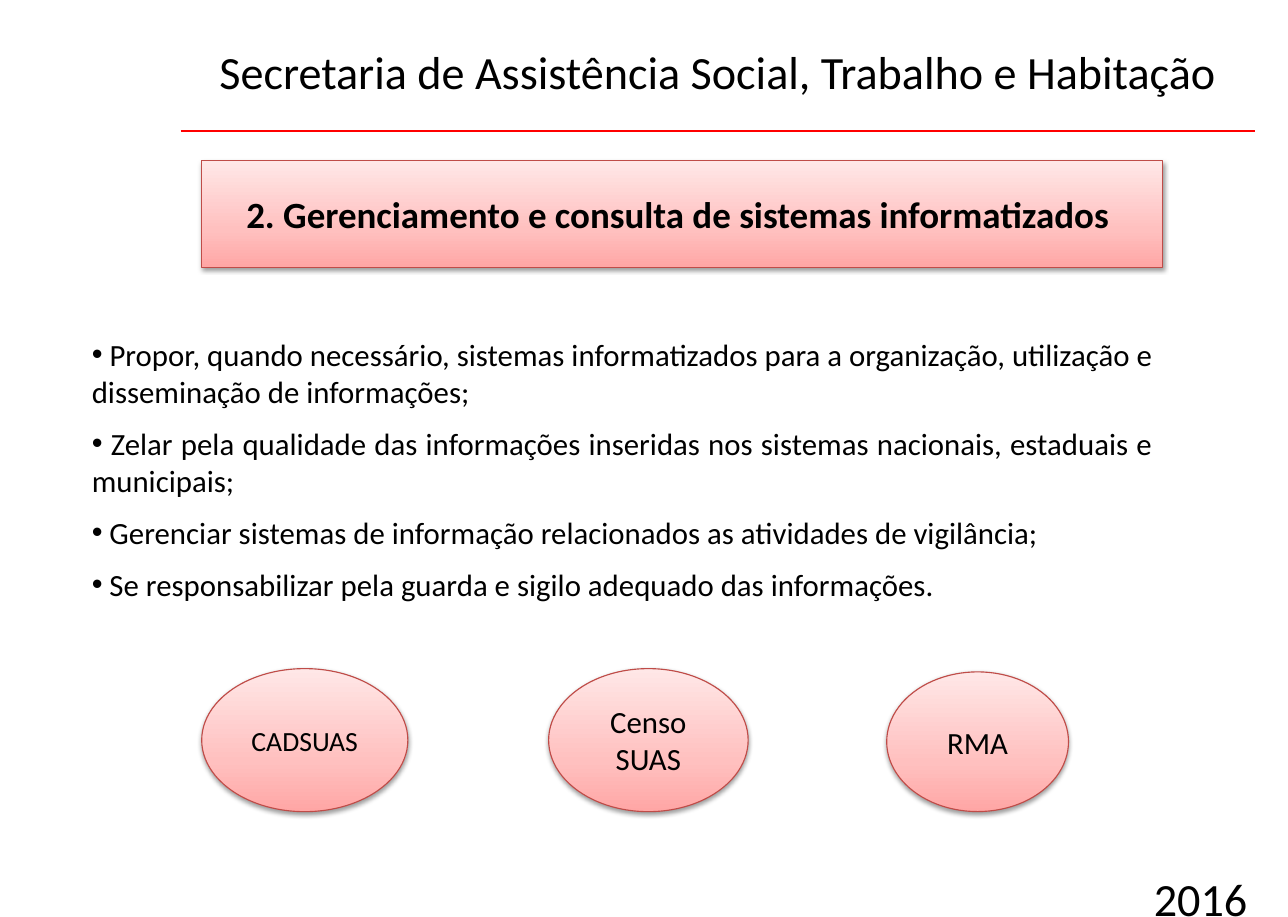
import pptx
import pptx.dml.color
import pptx.enum.shapes
import pptx.enum.text
import pptx.oxml
import pptx.oxml.ns
import pptx.util
from lxml import etree

Inches = pptx.util.Inches
Pt = pptx.util.Pt
RGBColor = pptx.dml.color.RGBColor
MSO_SHAPE = pptx.enum.shapes.MSO_SHAPE
ALIGN = pptx.enum.text.PP_ALIGN
ANCHOR = pptx.enum.text.MSO_ANCHOR
qn = pptx.oxml.ns.qn

FONT = "Calibri"
BLACK = RGBColor(0x00, 0x00, 0x00)
RED = RGBColor(0xFF, 0x00, 0x00)
DARK_RED = RGBColor(0xBF, 0x4C, 0x48)
PINK_STOPS = [
    (0, RGBColor(0xFF, 0xA6, 0xA5)),
    (35, RGBColor(0xFF, 0xC0, 0xBF)),
    (100, RGBColor(0xFF, 0xE7, 0xE7)),
]
DUTIES = [
    "Propor, quando necessário, sistemas informatizados para a organização, "
    "utilização e disseminação de informações;",
    "Zelar pela qualidade das informações inseridas nos sistemas nacionais, "
    "estaduais e municipais;",
    "Gerenciar sistemas de informação relacionados as atividades de vigilância;",
    "Se responsabilizar pela guarda e sigilo adequado das informações.",
]
SYSTEMS = [
    ("CADSUAS", 18, (1.82, 6.03, 1.86, 1.29)),
    ("Censo SUAS", 20, (4.95, 6.03, 1.8, 1.29)),
    ("RMA", 20, (8, 6.06, 1.64, 1.26)),
]


def write(p, text, size=20, bold=False, align=ALIGN.LEFT, before=0, bullet=None):
    """Fill a paragraph with formatted text."""
    if bullet:
        pPr = p._p.get_or_add_pPr()
        etree.SubElement(pPr, qn("a:buFont"), typeface="Arial")
        etree.SubElement(pPr, qn("a:buChar"), char=bullet)
    p.alignment = align
    p.space_before = Pt(before)
    r = p.add_run()
    r.text = text
    r.font.name = FONT
    r.font.size = Pt(size)
    r.font.bold = bold
    r.font.color.rgb = BLACK


def set_frame(sp, anchor, x_inset=0.1, y_inset=0.05):
    """Set wrapping, anchor and insets, and return the text frame."""
    tf = sp.text_frame
    tf.word_wrap = True
    tf.auto_size = pptx.enum.text.MSO_AUTO_SIZE.NONE
    tf.vertical_anchor = anchor
    tf.margin_left = tf.margin_right = Inches(x_inset)
    tf.margin_top = tf.margin_bottom = Inches(y_inset)
    return tf


def add_text_box(slide, box, **insets):
    """Add a top-anchored text box and return its frame."""
    sp = slide.shapes.add_textbox(*map(Inches, box))
    return set_frame(sp, ANCHOR.TOP, **insets)


def style_pink(sp):
    """Give a shape the pink gradient, red outline and soft shadow."""
    sp.line.color.rgb = DARK_RED
    sp.line.width = Pt(0.75)
    sp.fill.gradient()
    grad = sp._element.spPr.find(qn("a:gradFill"))
    stops = grad.find(qn("a:gsLst"))
    for stop in list(stops):
        stops.remove(stop)
    for pos, color in PINK_STOPS:
        gs = etree.SubElement(stops, qn("a:gs"), pos=str(pos * 1000))
        etree.SubElement(gs, qn("a:srgbClr"), val=str(color))
    grad.find(qn("a:lin")).set("ang", str(270 * 60000))
    sp.shadow.inherit = False
    effects = sp._element.spPr.find(qn("a:effectLst"))
    shadow = etree.SubElement(
        effects, qn("a:outerShdw"), blurRad=str(Pt(3.1)), dist=str(Pt(1.6)),
        dir=str(90 * 60000), rotWithShape="0")
    color = etree.SubElement(shadow, qn("a:srgbClr"), val=str(BLACK))
    etree.SubElement(color, qn("a:alpha"), val="38000")


def add_header_line(slide):
    """Draw the red rule under the header."""
    line = slide.shapes.add_connector(
        pptx.enum.shapes.MSO_CONNECTOR.STRAIGHT,
        Inches(1.63), Inches(1.18), Inches(11.32), Inches(1.18))
    line.line.color.rgb = RED
    line.line.width = Pt(1.5)
    etree.SubElement(line._element.spPr, qn("a:effectLst"))


def format_title(slide, text):
    """Turn the title placeholder into the rounded section banner."""
    sp = slide.shapes.title
    sp.left, sp.top, sp.width, sp.height = map(Inches, (1.82, 1.45, 8.67, 0.96))
    geom = etree.SubElement(sp._element.spPr, qn("a:prstGeom"), prst="roundRect")
    etree.SubElement(geom, qn("a:avLst"))
    style_pink(sp)
    tf = set_frame(sp, ANCHOR.MIDDLE, 0.11, 0.06)
    tf.margin_right = Inches(0.19)
    write(tf.paragraphs[0], text, size=24, bold=True, align=ALIGN.CENTER)


def add_duties(slide):
    """Add the justified bullet list."""
    tf = add_text_box(slide, (0.73, 2.98, 9.77, 2.6))
    for i, duty in enumerate(DUTIES):
        p = tf.add_paragraph() if i else tf.paragraphs[0]
        write(p, " " + duty, align=ALIGN.JUSTIFY, before=9.75 if i else 0, bullet="•")


def add_system(slide, name, size, box):
    """Add an ellipse naming an information system."""
    sp = slide.shapes.add_shape(MSO_SHAPE.OVAL, *map(Inches, box))
    style_pink(sp)
    tf = set_frame(sp, ANCHOR.MIDDLE)
    write(tf.paragraphs[0], name, size=size, align=ALIGN.CENTER)


def main():
    """Build and save the slide."""
    prs = pptx.Presentation()
    prs.slide_width, prs.slide_height = Inches(11.62), Inches(8.27)
    slide = prs.slides.add_slide(prs.slide_layouts.get_by_name("Title Only"))
    add_header_line(slide)
    for text, box in [
        ("Secretaria de Assistência Social, Trabalho e Habitação", (1.87, 0.33, 9.42, 0.62)),
        ("2016", (10.3, 7.79, 1.32, 0.48)),
    ]:
        tf = add_text_box(slide, box, x_inset=0.11, y_inset=0.06)
        write(tf.paragraphs[0], text, size=30)
    format_title(slide, "2. Gerenciamento e consulta de sistemas informatizados")
    add_duties(slide)
    for name, size, box in SYSTEMS:
        add_system(slide, name, size, box)
    prs.save("out.pptx")


if __name__ == "__main__":
    main()
